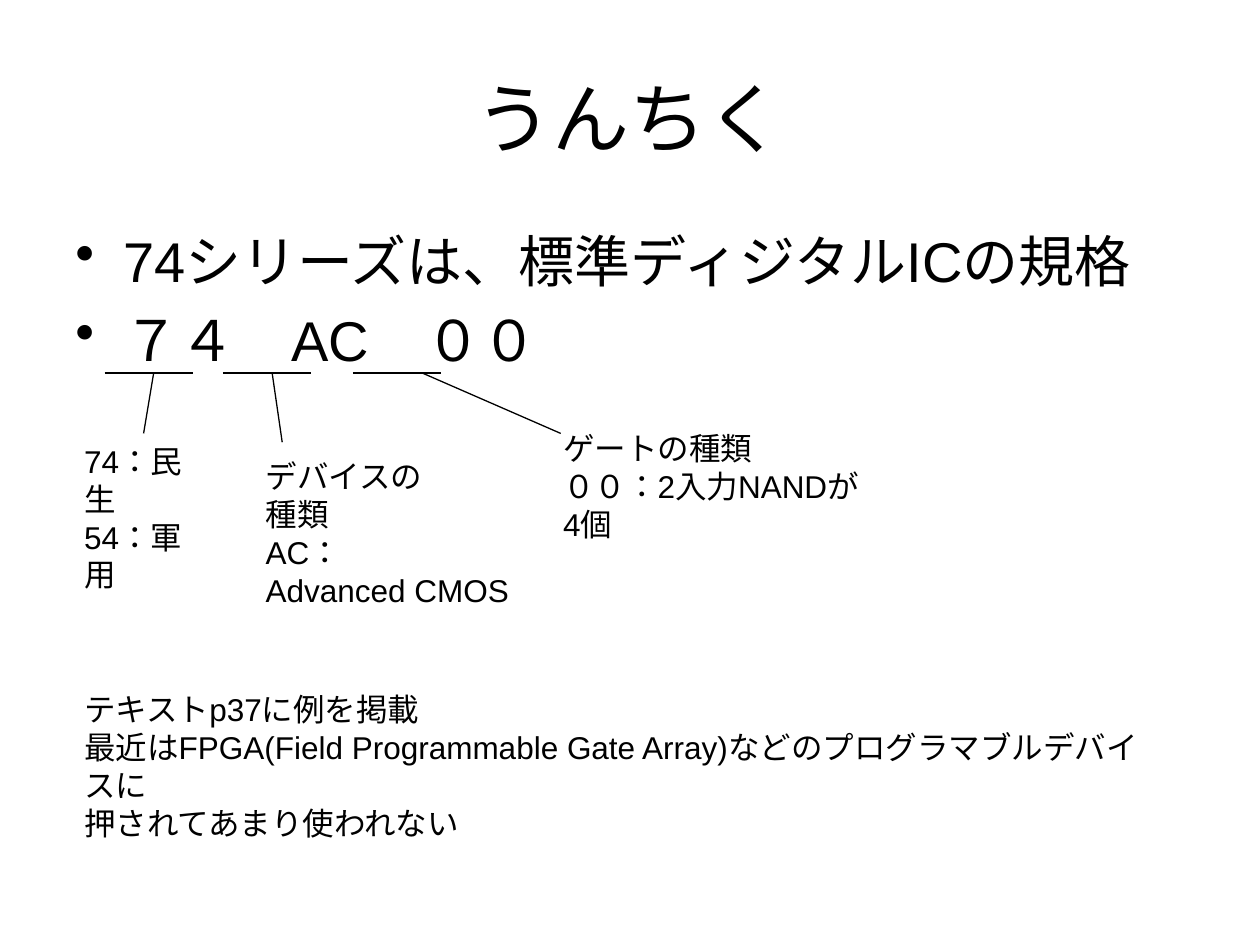
"""Build the slide that explains how 74 series part numbers are read."""
import pptx
import pptx.dml.color
import pptx.enum.lang
import pptx.enum.shapes
import pptx.enum.text
import pptx.util
from lxml import etree

Inches = pptx.util.Inches
Pt = pptx.util.Pt
INK = "000000"
LINE_WIDTH = 0.75
RULE_Y = 2.96
RULE_LENGTH = 0.7
BULLET_INDENT = 0.38

TITLE = ((0.5, 0.3, 9, 1.25), ["うんちく"])
BULLETS = (
    (0.5, 1.75, 9.07, 1.45),
    ["74シリーズは、標準ディジタルICの規格", "７４　AC　００"],
)
NOTES = [
    ((0.57, 3.46, 1.1, 0.7), ["74：民生", "54：軍用"]),
    ((2.01, 3.58, 2.13, 1.3), ["デバイスの", "種類", "AC：", "Advanced CMOS"]),
    ((4.37, 3.36, 2.65, 0.7), ["ゲートの種類", "００：2入力NANDが4個"]),
    (
        (0.57, 5.43, 8.75, 1),
        [
            "テキストp37に例を掲載",
            "最近はFPGA(Field Programmable Gate Array)などのプログラマブルデバイスに",
            "押されてあまり使われない",
        ],
    ),
]
CALLOUTS = [
    {"rule_left": 0.83, "start_x": 1.22, "end": (1.14, 3.44)},
    {"rule_left": 1.77, "start_x": 2.16, "end": (2.24, 3.51)},
    {"rule_left": 2.8, "start_x": 3.35, "end": (4.45, 3.44)},
]


def color(value):
    return pptx.dml.color.RGBColor.from_string(value)


def set_all(target, values):
    for name, value in values.items():
        setattr(target, name, value)


def add_text(page, place, lines, size, frame_format=None, para_format=None):
    box = page.shapes.add_textbox(*map(Inches, place))
    frame = box.text_frame
    set_all(frame, {"word_wrap": True, **(frame_format or {})})
    frame.text = "\n".join(lines)
    for para in frame.paragraphs:
        set_all(para, para_format or {})
        for span in para.runs:
            set_all(span.font, {
                "name": "Arial",
                "size": Pt(size),
                "language_id": pptx.enum.lang.MSO_LANGUAGE_ID.JAPANESE,
            })
            span.font.color.rgb = color(INK)
    return box


def add_bullets(box):
    for para in box.text_frame.paragraphs:
        properties = para._p.get_or_add_pPr()
        properties.set("marL", str(Inches(BULLET_INDENT)))
        properties.set("indent", str(-Inches(BULLET_INDENT)))
        bullet = etree.SubElement(properties, pptx.oxml.ns.qn("a:buChar"))
        bullet.set("char", "•")


def add_line(page, start, end):
    line = page.shapes.add_connector(
        pptx.enum.shapes.MSO_CONNECTOR.STRAIGHT, *map(Inches, start + end)
    )
    line.line.color.rgb = color(INK)
    line.line.width = Pt(LINE_WIDTH)
    etree.SubElement(line._element.spPr, pptx.oxml.ns.qn("a:effectLst"))


def main():
    deck = pptx.Presentation()
    set_all(deck, {"slide_width": Inches(10), "slide_height": Inches(7.5)})
    page = deck.slides.add_slide(deck.slide_layouts[6])
    add_text(
        page, *TITLE, 44,
        {"vertical_anchor": pptx.enum.text.MSO_ANCHOR.MIDDLE},
        {"alignment": pptx.enum.text.PP_ALIGN.CENTER},
    )
    add_bullets(add_text(page, *BULLETS, 32, para_format={"space_before": Pt(6.4)}))
    for place, lines in NOTES:
        add_text(page, place, lines, 18)
    for callout in CALLOUTS:
        left = callout["rule_left"]
        add_line(page, (left, RULE_Y), (left + RULE_LENGTH, RULE_Y))
        add_line(page, (callout["start_x"], RULE_Y), callout["end"])
    deck.save("out.pptx")


if __name__ == "__main__":
    main()
